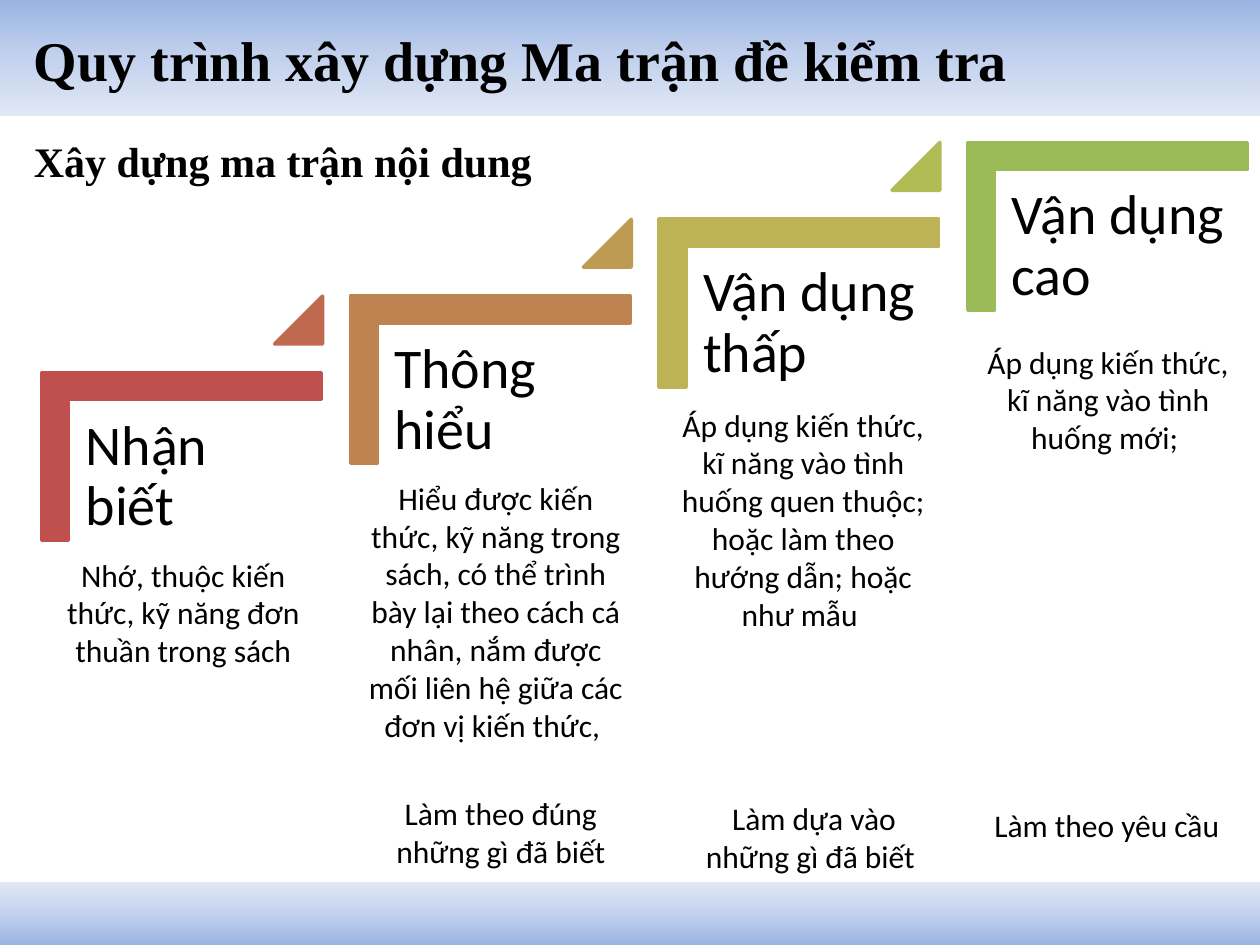
from copy import deepcopy

from pptx import Presentation
from pptx.dml.color import RGBColor
from pptx.enum.shapes import MSO_SHAPE
from pptx.enum.text import MSO_ANCHOR, MSO_AUTO_SIZE, PP_ALIGN
from pptx.oxml.ns import qn
from pptx.util import Inches, Pt

RECTANGLE = MSO_SHAPE.RECTANGLE
CORNER = MSO_SHAPE.CORNER
TRIANGLE = MSO_SHAPE.ISOSCELES_TRIANGLE
MIDDLE, TOP = MSO_ANCHOR.MIDDLE, MSO_ANCHOR.TOP
LEFT, CENTER = PP_ALIGN.LEFT, PP_ALIGN.CENTER
NO_AUTOFIT = MSO_AUTO_SIZE.NONE

COLORS = {
    "text": "000000",
    "band_edge": "9AB5E4", "band_middle": "C2D1ED", "band_inner": "E1E8F5",
}
SERIF, SANS = "Times New Roman", "Calibri"

# Level name, corner colour, colour of the triangle leading to the next level
LEVELS = [
    ("Nhận biết", "C0504D", "BF6A4F"),
    ("Thông hiểu", "BE8351", "BD9B53"),
    ("Vận dụng thấp", "BDB255", "B1BC57"),
    ("Vận dụng cao", "9BBB59", None),
]
# Text and its box: left, top, width, height
DESCRIPTIONS = [
    ("Nhớ, thuộc kiến thức, kỹ năng đơn thuần trong sách", (0.33, 4.36, 2.25, 1.01)),
    ("Hiểu được kiến thức, kỹ năng trong sách, có thể trình bày lại theo cách "
     "cá nhân, nắm được mối liên hệ giữa các đơn vị kiến thức, ", (2.81, 3.75, 2.25, 2.22)),
    ("Áp dụng kiến thức, kĩ năng vào tình huống quen thuộc; hoặc làm theo "
     "hướng dẫn; hoặc như mẫu ", (5.25, 3.17, 2.25, 1.92)),
    ("Áp dụng kiến thức, kĩ năng vào tình huống mới; ", (7.67, 2.67, 2.25, 1.01)),
    ("Làm theo đúng những gì đã biết", (2.89, 6.25, 2.17, 0.71)),
    ("Làm dựa vào những gì đã biết ", (5.42, 6.29, 2.08, 0.71)),
    ("Làm theo yêu cầu", (7.7, 6.35, 2.17, 0.4)),
]
FIRST_LEFT, FIRST_TOP = 0.33, 2.96
STEP_RIGHT, STEP_UP = 2.45, 0.61
CORNER_WIDTH, CORNER_HEIGHT = 2.22, 1.33


def rgb(value):
    return RGBColor.from_string(value)


def add_text(page, box, text, size, font=SANS, bold=False, align=LEFT,
             anchor=TOP, margin=None, spacing=None):
    shape = page.shapes.add_textbox(*map(Inches, box))
    frame = shape.text_frame
    frame.word_wrap = True
    frame.auto_size = NO_AUTOFIT
    frame.vertical_anchor = anchor
    if margin is not None:
        frame.margin_left = frame.margin_right = Inches(margin)
        frame.margin_top = frame.margin_bottom = Inches(margin)
    para = frame.paragraphs[0]
    para.alignment = align
    if spacing is not None:
        para.line_spacing = spacing
    span = para.add_run()
    span.text = text
    span.font.name = font
    span.font.size = Pt(size)
    span.font.bold = bold
    span.font.color.rgb = rgb(COLORS["text"])


def add_solid(page, kind, box, color):
    shape = page.shapes.add_shape(kind, *map(Inches, box))
    shape.shadow.inherit = False
    shape.fill.solid()
    shape.fill.fore_color.rgb = rgb(color)
    shape.line.color.rgb = rgb(color)
    shape.line.width = Pt(2)
    return shape


def add_band(page, box, angle):
    """Add a gradient band; the angle runs counter-clockwise."""
    band = page.shapes.add_shape(RECTANGLE, *map(Inches, box))
    band.shadow.inherit = False
    band.line.fill.background()
    band.fill.gradient()
    band.fill.gradient_angle = angle
    stop_list = band._element.spPr.find(qn("a:gradFill")).find(qn("a:gsLst"))
    stop_list.insert(1, deepcopy(stop_list[0]))
    names = ("band_edge", "band_middle", "band_inner")
    for index, (stop, name) in enumerate(zip(band.fill.gradient_stops, names)):
        stop.position = index / 2
        stop.color.rgb = rgb(COLORS[name])


def add_level(page, left, top, name, color, triangle_color):
    # The corner is turned a quarter, so its frame is the visible box on end
    shift = (CORNER_WIDTH - CORNER_HEIGHT) / 2
    corner = add_solid(page, CORNER, (left + shift, top - shift,
                                      CORNER_HEIGHT, CORNER_WIDTH), color)
    corner.rotation = 90
    corner.adjustments[0] = corner.adjustments[1] = 0.16
    add_text(page, (left + 0.22, top + 0.22, 2, 1.76), name, 32,
             margin=0.13, spacing=0.9)
    if triangle_color:
        triangle = add_solid(page, TRIANGLE,
                             (left + 1.85, top - 0.61, 0.38, 0.38), triangle_color)
        triangle.adjustments[0] = 1


def add_headings(page):
    add_text(page, (0.17, 0.02, 9.67, 0.9), "Quy trình xây dựng Ma trận đề kiểm tra",
             32, SERIF, bold=True, anchor=MIDDLE)
    add_text(page, (0.17, 1.03, 9.75, 0.5), "Xây dựng ma trận nội dung",
             24, SERIF, bold=True)


def add_staircase(page, left, top):
    for index, level in enumerate(LEVELS):
        add_level(page, left + index * STEP_RIGHT, top - index * STEP_UP, *level)


def add_descriptions(page):
    for text, box in DESCRIPTIONS:
        add_text(page, box, text, 18, align=CENTER)


def main():
    deck = Presentation()
    deck.slide_width, deck.slide_height = Inches(10), Inches(7.5)
    page = deck.slides.add_slide(deck.slide_layouts[6])
    add_band(page, (0, 0, 10, 0.92), 270)
    add_band(page, (0, 7, 10, 0.5), 90)
    add_staircase(page, FIRST_LEFT, FIRST_TOP)
    add_headings(page)
    add_descriptions(page)
    deck.save("out.pptx")


if __name__ == "__main__":
    main()
